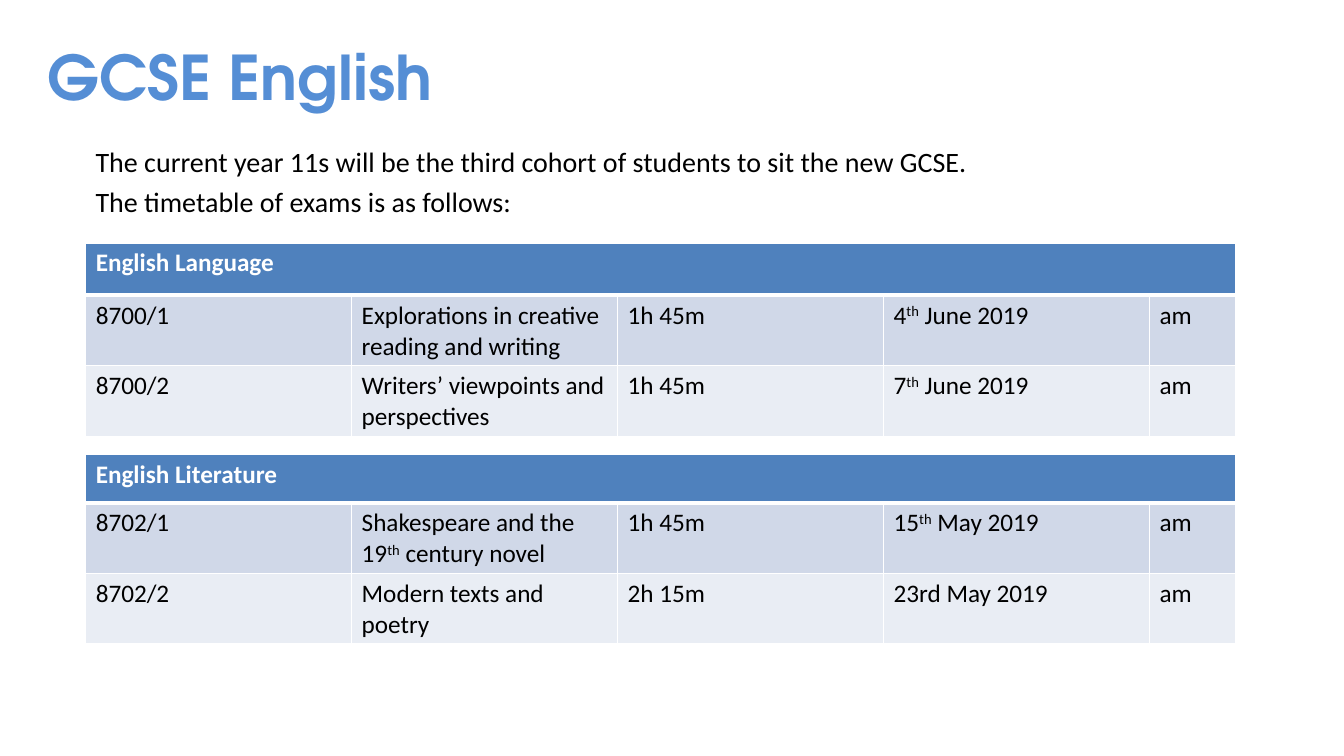
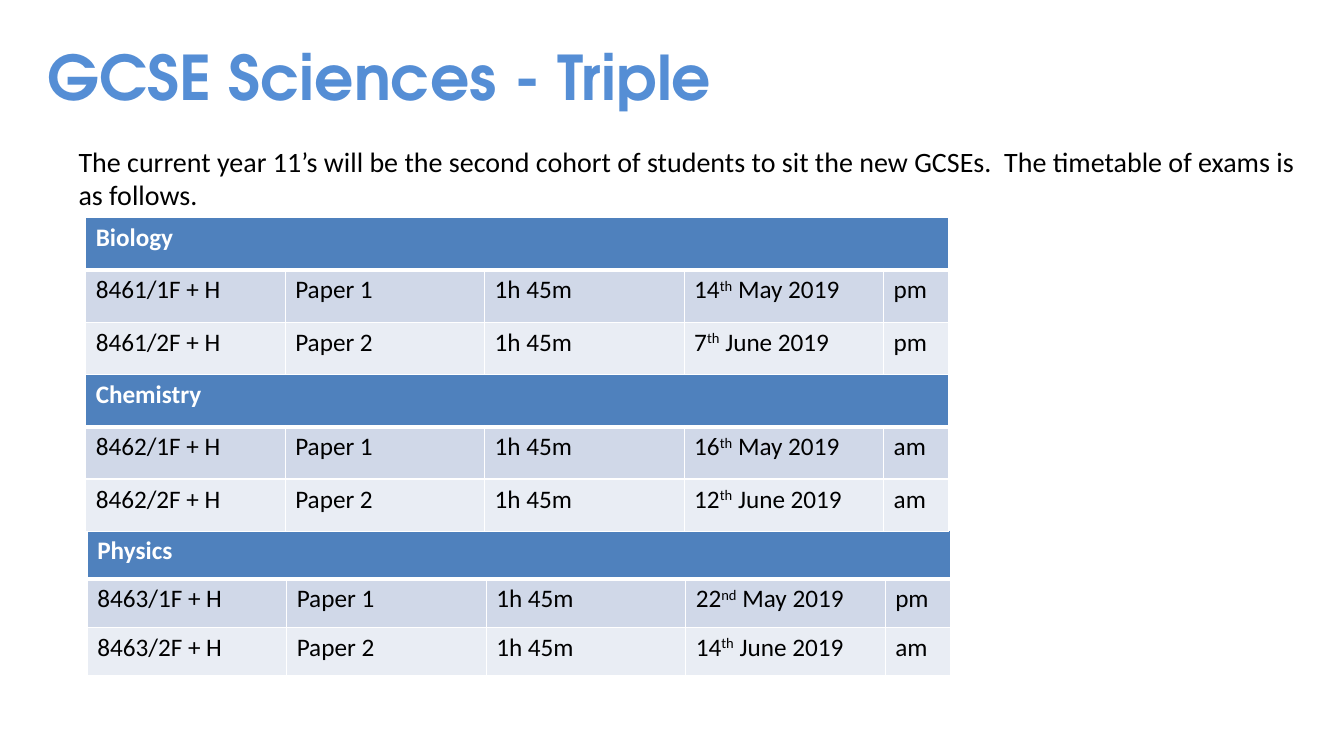
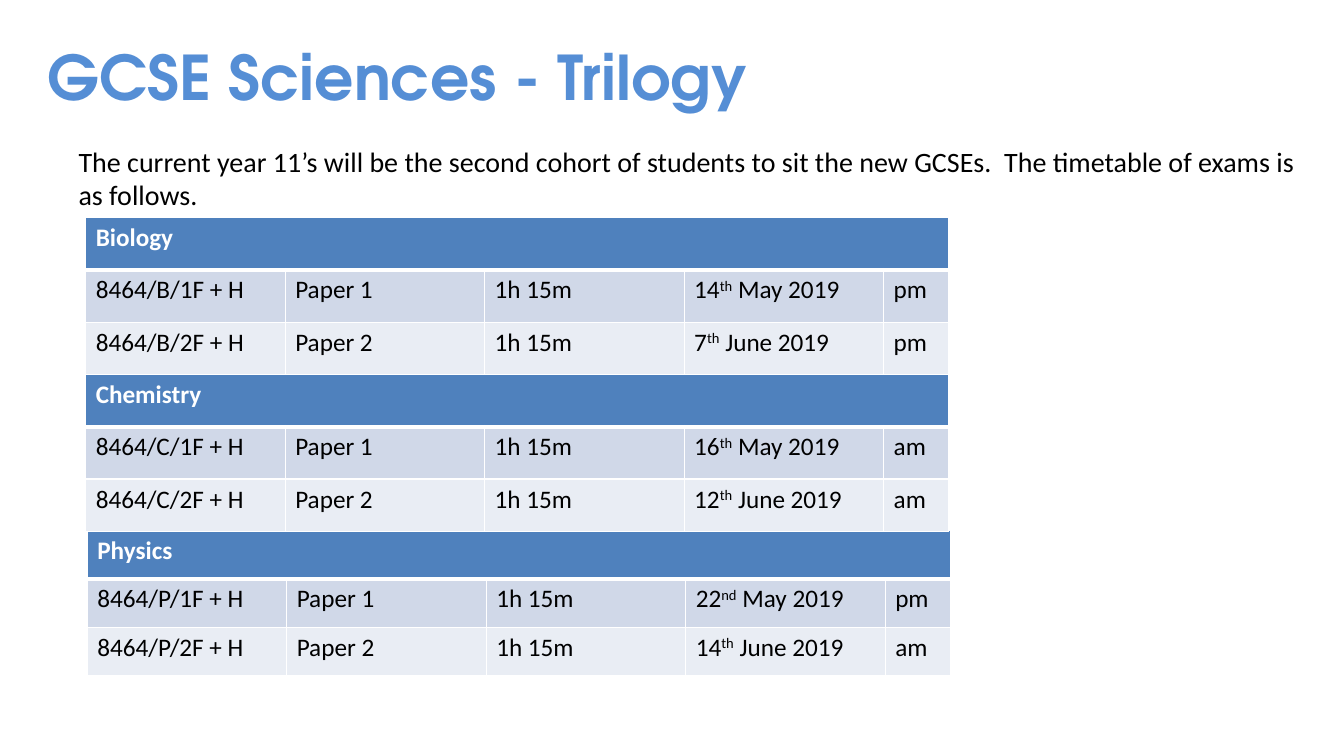
"""Build three slides of GCSE exam timetables."""
import lxml.etree
import pptx
import pptx.dml.color
import pptx.enum.text
import pptx.oxml.ns
import pptx.util

Pt = pptx.util.Pt
qn = pptx.oxml.ns.qn


def rgb(value):
    """Return the colour for a hex string."""
    return pptx.dml.color.RGBColor.from_string(value)


class Deck:
    """Hold the shared style and the current slide."""

    BLUE, HEAD, WHITE, BLACK = "558ED5", "4F81BD", "FFFFFF", "000000"
    BANDS = "D0D8E8", "E9EDF4"
    TITLE_FONT, FONT = "TeX Gyre Adventor", "Calibri"

    def __init__(self):
        """Start a wide presentation."""
        self.prs = pptx.Presentation()
        self.prs.slide_width, self.prs.slide_height = Pt(960), Pt(540)
        self.s = None

    def style(self, p, size, color, font=FONT, bold=False):
        """Format every run of a left-aligned paragraph."""
        p.alignment = pptx.enum.text.PP_ALIGN.LEFT
        for r in p.runs:
            r.font.size, r.font.name, r.font.bold = Pt(size), font, bold
            r.font.color.rgb = rgb(color)

    def slide(self, title):
        """Add a slide with its title."""
        self.s = self.prs.slides.add_slide(self.prs.slide_layouts[5])
        sp = self.s.shapes.title
        sp.left, sp.top, sp.width, sp.height = Pt(26.6), Pt(9.4), Pt(864), Pt(90)
        tf = sp.text_frame
        tf.text = title
        tf.auto_size = pptx.enum.text.MSO_AUTO_SIZE.NONE
        tf.vertical_anchor = pptx.enum.text.MSO_ANCHOR.MIDDLE
        self.style(tf.paragraphs[0], 44, self.BLUE, self.TITLE_FONT, True)

    def intro(self, left, width, text):
        """Add the introduction, one paragraph a line."""
        tf = self.s.shapes.add_textbox(Pt(left), Pt(99.4), Pt(width), Pt(60)).text_frame
        tf.word_wrap = True
        tf.text = text
        for i, p in enumerate(tf.paragraphs):
            p.space_before = Pt(4.8 if i else 0)
            self.style(p, 20, self.BLACK)

    def borders(self, cell, row):
        """Draw white cell borders, thick below the heading row."""
        tc_pr = cell._tc.get_or_add_tcPr()
        thick = {"T": row == 1, "B": row == 0}
        for side in "LRTB":
            width = Pt(3 if thick.get(side) else 1)
            ln = lxml.etree.SubElement(tc_pr, qn(f"a:ln{side}"), w=str(width))
            fill = lxml.etree.SubElement(ln, qn("a:solidFill"))
            lxml.etree.SubElement(fill, qn("a:srgbClr"), val=self.WHITE)

    def cell(self, cell, row, text):
        """Fill a cell; text between carets is superscript."""
        self.borders(cell, row)
        cell.fill.solid()
        cell.fill.fore_color.rgb = rgb(self.BANDS[(row - 1) % 2] if row else self.HEAD)
        p = cell.text_frame.paragraphs[0]
        for i, part in enumerate(text.split("^")):
            r = p.add_run()
            r.text = part
            if i % 2:
                r._r.get_or_add_rPr().set("baseline", "30000")
        self.style(p, 18, self.BLACK if row else self.WHITE, bold=row == 0)

    def timetable(self, left, top, widths, height, heading, exams):
        """Add a table of exams under a merged heading."""
        rows = [(heading, "", "", "", ""), *exams]
        table = self.s.shapes.add_table(
            len(rows), len(widths), Pt(left), Pt(top),
            Pt(sum(widths)), Pt(height * len(rows))).table
        for column, width in zip(table.columns, widths):
            column.width = Pt(width)
        for i, row in enumerate(rows):
            table.rows[i].height = Pt(height)
            for j, text in enumerate(row):
                self.cell(table.cell(i, j), i, text)
        table.cell(0, 0).merge(table.cell(0, len(widths) - 1))


ENGLISH_WIDTHS = [190] * 4 + [61.5]
SCIENCE_WIDTHS = [142.5] * 4 + [46.5]
ENGLISH = [
    (173.5, 37.4, "English Language", [
        ("8700/1", "Explorations in creative reading and writing",
         "1h 45m", "4^th^ June 2019", "am"),
        ("8700/2", "Writers’ viewpoints and perspectives",
         "1h 45m", "7^th^ June 2019", "am")]),
    (324.7, 34.5, "English Literature", [
        ("8702/1", "Shakespeare and the 19^th^ century novel",
         "1h 45m", "15^th^ May 2019", "am"),
        ("8702/2", "Modern texts and poetry", "2h 15m", "23rd May 2019", "am")]),
]
SCIENCES = [
    (61.2, 155.3, 37.4, "Biology", [("14^th^ May 2019", "pm"), ("7^th^ June 2019", "pm")]),
    (62.3, 379, 34.5, "Physics", [("22^nd^ May 2019", "pm"), ("14^th^ June 2019", "am")]),
    (61.2, 267.4, 37.4, "Chemistry", [("16^th^ May 2019", "am"), ("12^th^ June 2019", "am")]),
]
COURSES = [
    ("Triple", "1h 45m", {"Biology": "8461", "Chemistry": "8462", "Physics": "8463"}),
    ("Trilogy", "1h 15m", {"Biology": "8464/B", "Chemistry": "8464/C", "Physics": "8464/P"}),
]


def main():
    """Build and save the slides."""
    deck = Deck()
    deck.slide("GCSE English")
    deck.intro(61.2, 850, "The current year 11s will be the third cohort of students "
               "to sit the new GCSE.\nThe timetable of exams is as follows:")
    for top, height, heading, exams in ENGLISH:
        deck.timetable(61.2, top, ENGLISH_WIDTHS, height, heading, exams)

    for course, length, codes in COURSES:
        deck.slide(f"GCSE Sciences - {course}")
        deck.intro(49, 890, "The current year 11’s will be the second cohort of students "
                   "to sit the new GCSEs.  The timetable of exams is as follows.")
        for left, top, height, subject, sittings in SCIENCES:
            exams = [(f"{codes[subject]}/{n}F + H", f"Paper {n}", length, *sitting)
                     for n, sitting in enumerate(sittings, 1)]
            deck.timetable(left, top, SCIENCE_WIDTHS, height, subject, exams)
    deck.prs.save("out.pptx")


if __name__ == "__main__":
    main()
